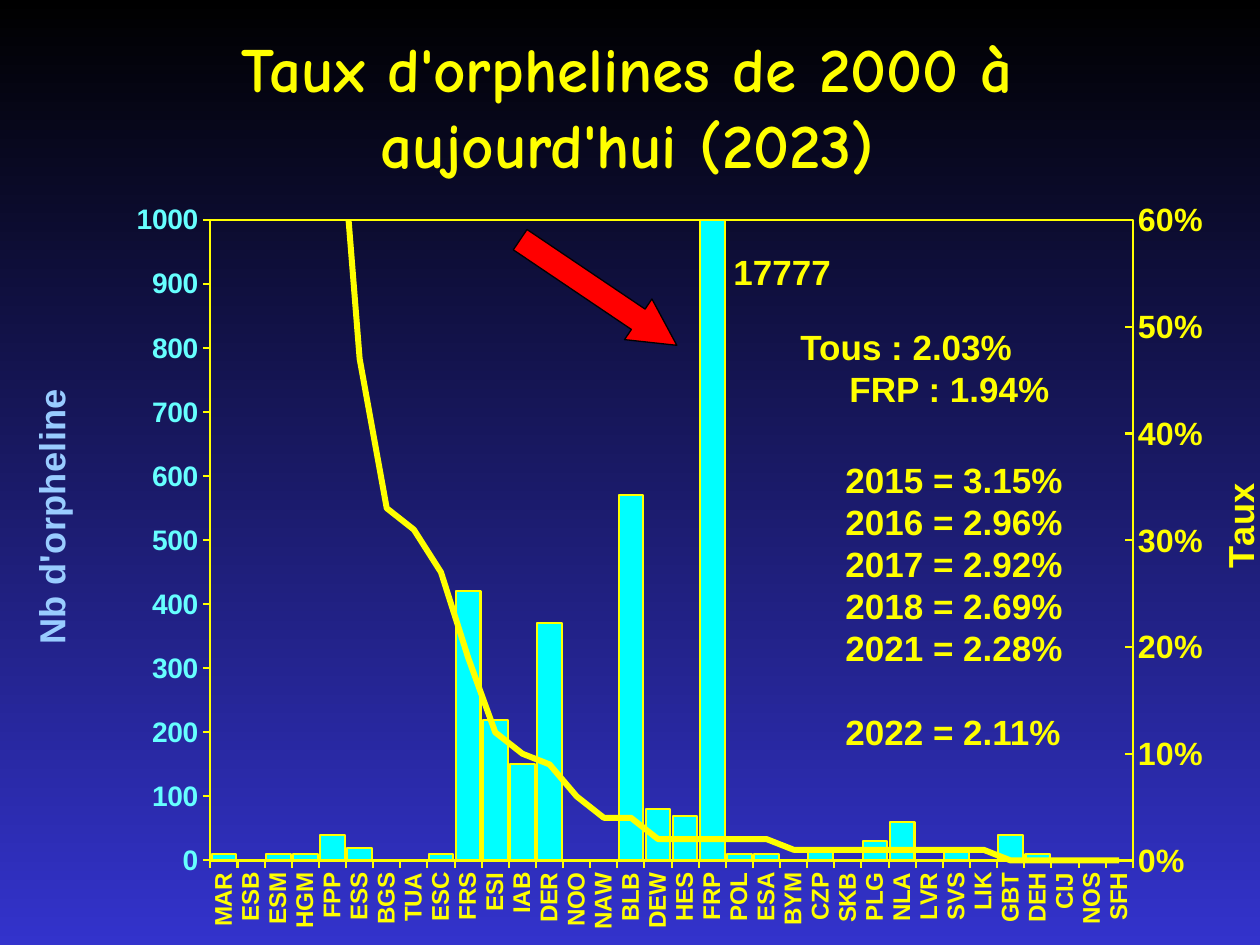
"""Build the slide on orphan rates: bars with a rate line on a second axis, and yearly notes."""
import copy

import pptx
import pptx.chart.axis
import pptx.chart.data
import pptx.dml.color
import pptx.enum.chart
import pptx.enum.shapes
import pptx.enum.text
import pptx.oxml
import pptx.oxml.ns
import pptx.util

PX = 914400 / 126
YELLOW, CYAN = "FFFF00", "00FFFF"
qn = pptx.oxml.ns.qn
namespaces = pptx.oxml.ns.nsdecls("c", "a")


def color(value):
    return pptx.dml.color.RGBColor.from_string(value)


def set_layout(parent, **fractions):
    layout = parent.find(qn("c:layout"))
    if layout is not None:
        parent.remove(layout)
    target = '<c:layoutTarget val="inner"/>' if "w" in fractions else ""
    modes = '<c:xMode val="edge"/><c:yMode val="edge"/>'
    sizes = "".join(f'<c:{key} val="{value}"/>' for key, value in fractions.items())
    layout = pptx.oxml.parse_xml(
        f"<c:layout {namespaces}><c:manualLayout>{target}{modes}{sizes}</c:manualLayout></c:layout>")
    parent.insert(1 if parent.find(qn("c:tx")) is not None else 0, layout)


presentation = pptx.Presentation()
presentation.slide_width = round(1260 * PX)
presentation.slide_height = round(945 * PX)
slide = presentation.slides.add_slide(presentation.slide_layouts[5])

background = slide.background.fill
background.gradient()
background.gradient_angle = 270
for stop, value in zip(background.gradient_stops, ["000000", "3333CC"]):
    stop.color.rgb = color(value)

title = slide.shapes.title
title.left, title.top, title.width, title.height = [round(n * PX) for n in (92, 27, 1071, 157)]
title.text_frame.text = "Taux d'orphelines de 2000 à aujourd'hui (2023)"
title.text_frame.auto_size = pptx.enum.text.MSO_AUTO_SIZE.NONE
title.text_frame.vertical_anchor = pptx.enum.text.MSO_ANCHOR.MIDDLE
paragraph = title.text_frame.paragraphs[0]
paragraph.alignment = pptx.enum.text.PP_ALIGN.CENTER
font = paragraph.runs[0].font
font.name, font.size, font.bold = "Comic Neue", pptx.util.Pt(36), True
font.color.rgb = color(YELLOW)
shadow = pptx.oxml.parse_xml(
    f'<a:effectLst {namespaces}><a:outerShdw dist="35921" dir="2700000">'
    '<a:srgbClr val="000000"/></a:outerShdw></a:effectLst>')
paragraph.runs[0]._r.rPr.find(qn("a:solidFill")).addnext(shadow)

chart_data = pptx.chart.data.CategoryChartData()
chart_data.categories = (
    "MAR ESB ESM HGM FPP ESS BGS TUA ESC FRS ESI IAB DER NOO NAW BLB DEW HES FRP POL "
    "ESA BYM CZP SKB PLG NLA LVR SVS LIK GBT DEH CIJ NOS SFH").split()
chart_data.add_series("Series 1", [
    10, 0, 10, 10, 40, 20, 0, 0, 10, 420, 220, 150, 370, 0, 0, 570, 80, 70, 17780,
    10, 10, 0, 20, 0, 30, 60, 0, 20, 0, 40, 10, 0, 0, 0])
chart_data.add_series("Series 2", [
    1, 1, 0.89, 0.88, 0.79, 0.47, 0.33, 0.31, 0.27, 0.19, 0.12, 0.1, 0.09, 0.06, 0.04,
    0.04, 0.02, 0.02, 0.02, 0.02, 0.02, 0.01, 0.01, 0.01, 0.01, 0.01, 0.01, 0.01, 0.01,
    0, 0, 0, 0, 0])
chart = slide.shapes.add_chart(
    pptx.enum.chart.XL_CHART_TYPE.COLUMN_CLUSTERED,
    *[round(n * PX) for n in (-4, 155, 1292, 784)], chart_data).chart
chart.has_legend = False
chart.has_title = False
chart.font.name, chart.font.size = "Arial", pptx.util.Pt(11.5)
bar_plot = chart.plots[0]
bar_plot.gap_width = 10
bar_plot.vary_by_categories = False
bars, rate = bar_plot.series
bars.format.fill.solid()
bars.format.fill.fore_color.rgb = color(CYAN)
for series, width in [(bars, 1.15), (rate, 3.44)]:
    series.format.line.color.rgb = color(YELLOW)
    series.format.line.width = pptx.util.Pt(width)

category_axis, left_axis = chart.category_axis, chart.value_axis
left_axis.has_major_gridlines = False
hidden_element = copy.deepcopy(category_axis._element)
right_element = copy.deepcopy(left_axis._element)
for element, own, crossing in [(hidden_element, "5001", "5002"), (right_element, "5002", "5001")]:
    element.find(qn("c:axId")).set("val", own)
    element.find(qn("c:crossAx")).set("val", crossing)
hidden_element.find(qn("c:delete")).set("val", "1")
right_element.find(qn("c:axPos")).set("val", "r")
right_element.find(qn("c:crosses")).set("val", "max")
left_axis._element.addnext(right_element)
right_element.addnext(hidden_element)
right_axis = pptx.chart.axis.ValueAxis(right_element)

line_chart = pptx.oxml.parse_xml(
    f'<c:lineChart {namespaces}><c:grouping val="standard"/><c:varyColors val="0"/>'
    '<c:marker val="1"/><c:axId val="5001"/><c:axId val="5002"/></c:lineChart>')
rate_element = rate._element
for invert in rate_element.findall(qn("c:invertIfNegative")):
    rate_element.remove(invert)
rate_element.find(qn("c:spPr")).addnext(
    pptx.oxml.parse_xml(f'<c:marker {namespaces}><c:symbol val="none"/></c:marker>'))
rate_element.append(pptx.oxml.parse_xml(f'<c:smooth {namespaces} val="0"/>'))
line_chart.insert(2, rate_element)
bar_plot._element.addnext(line_chart)

tick_mark = pptx.enum.chart.XL_TICK_MARK
for axis, size, value, tick in [
        (category_axis, 13.8, YELLOW, tick_mark.OUTSIDE),
        (left_axis, 16.1, "66FFFF", tick_mark.OUTSIDE),
        (right_axis, 18.4, YELLOW, tick_mark.INSIDE)]:
    axis.major_tick_mark = tick
    axis.minor_tick_mark = tick_mark.NONE
    axis.format.line.color.rgb = color(YELLOW)
    axis.format.line.width = pptx.util.Pt(1.15)
    font = axis.tick_labels.font
    font.name, font.size, font.bold = "Arial", pptx.util.Pt(size), True
    font.color.rgb = color(value)
category_axis._element.find(qn("c:txPr")).find(qn("a:bodyPr")).set("rot", "-5400000")
right_axis.tick_labels.number_format = "0%"
right_axis.tick_labels.number_format_is_linked = False

for axis, text, value, maximum, unit, x, y in [
        (left_axis, "Nb d'orpheline", "99CCFF", 1000, 100, 0.02, 0.29),
        (right_axis, "Taux", YELLOW, 0.6, 0.1, 0.94, 0.41)]:
    axis.minimum_scale, axis.maximum_scale, axis.major_unit = 0, maximum, unit
    frame = axis.axis_title.text_frame
    frame.text = text
    frame._txBody.find(qn("a:bodyPr")).set("rot", "-5400000")
    frame._txBody.find(qn("a:bodyPr")).set("vert", "horz")
    font = frame.paragraphs[0].runs[0].font
    font.name, font.size, font.bold = "Arial", pptx.util.Pt(20.7), True
    font.color.rgb = color(value)
    set_layout(axis.axis_title._element, x=x, y=y)

plot_area = line_chart.getparent()
set_layout(plot_area, x=0.166, y=0.083, w=0.714, h=0.817)
plot_area.append(pptx.oxml.parse_xml(
    f'<c:spPr {namespaces}><a:noFill/><a:ln w="14605"><a:solidFill>'
    f'<a:srgbClr val="{YELLOW}"/></a:solidFill></a:ln></c:spPr>'))

arrow = slide.shapes.add_shape(
    pptx.enum.shapes.MSO_SHAPE.RIGHT_ARROW, *[round(n * PX) for n in (504, 268, 189, 49)])
arrow.rotation = 34
arrow.adjustments[1] = 0.95
arrow.shadow.inherit = False
arrow.fill.solid()
arrow.fill.fore_color.rgb = color("FF0000")
arrow.line.color.rgb = color("000000")
arrow.line.width = pptx.util.Pt(0.75)

notes = []
for box, lines in [
        ((721, 244, 134, 55), ["17777"]),
        ((788, 319, 321, 97), ["Tous : 2.03%", "FRP : 1.94%"]),
        ((833, 452, 244, 310), ["2015 = 3.15%", "2016 = 2.96%", "2017 = 2.92%",
                                "2018 = 2.69%", "2021 = 2.28%", "2022 = 2.11%"])]:
    frame = slide.shapes.add_textbox(*[round(n * PX) for n in box]).text_frame
    frame.word_wrap = True
    frame.auto_size = pptx.enum.text.MSO_AUTO_SIZE.SHAPE_TO_FIT_TEXT
    frame.text = "\n".join(lines)
    for paragraph in frame.paragraphs:
        font = paragraph.font
        font.name, font.size, font.bold = "Arial", pptx.util.Pt(20), True
        font.color.rgb = color(YELLOW)
    notes.append(frame)
notes[1].paragraphs[1]._p.get_or_add_pPr().set("marL", str(round(49 * PX)))
notes[2].paragraphs[-1].space_before = pptx.util.Pt(24)

presentation.save("out.pptx")
